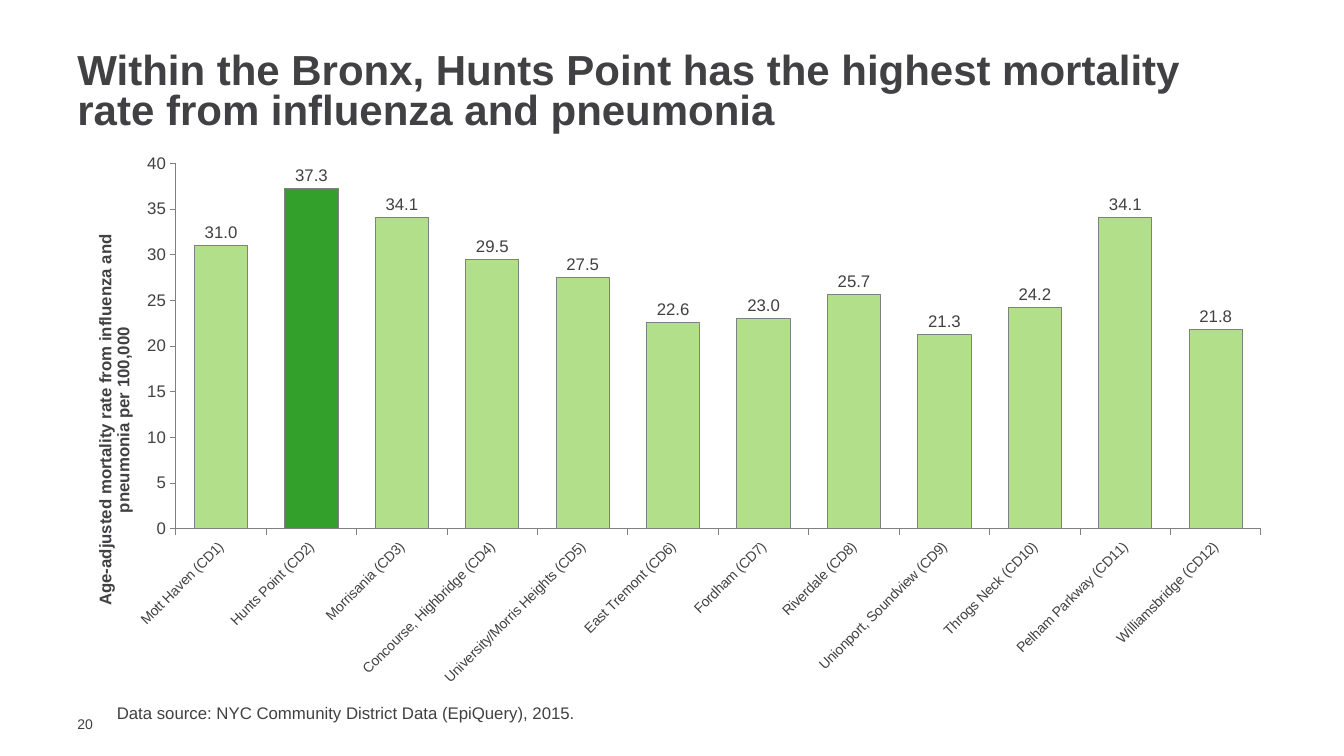
from dataclasses import dataclass

from lxml import etree
from pptx import Presentation
from pptx.chart.data import CategoryChartData
from pptx.dml.color import RGBColor
from pptx.enum.chart import XL_CHART_TYPE as ChartType
from pptx.enum.chart import XL_LABEL_POSITION as LabelPosition
from pptx.enum.chart import XL_TICK_MARK as TickMark
from pptx.enum.text import MSO_ANCHOR as Anchor
from pptx.oxml import parse_xml
from pptx.oxml.ns import nsdecls, qn
from pptx.util import Inches, Pt


@dataclass(frozen=True)
class Theme:
    font: str = "Arial"
    text: str = "414042"
    bar: str = "B2DF8A"
    highlight: str = "33A02C"
    outline: str = "808080"
    title_size: int = 30
    body_size: int = 12
    small_size: int = 10
    line_width: float = 0.75


THEME = Theme()
HIGHLIGHTED = "Hunts Point (CD2)"
MORTALITY_RATES = {
    "Mott Haven (CD1)": 31.0,
    HIGHLIGHTED: 37.3,
    "Morrisania (CD3)": 34.1,
    "Concourse, Highbridge (CD4)": 29.5,
    "University/Morris Heights (CD5)": 27.5,
    "East Tremont (CD6)": 22.6,
    "Fordham (CD7)": 23.0,
    "Riverdale (CD8)": 25.7,
    "Unionport, Soundview (CD9)": 21.3,
    "Throgs Neck (CD10)": 24.2,
    "Pelham Parkway (CD11)": 34.1,
    "Williamsbridge (CD12)": 21.8,
}
PLOT_LAYOUT = {"x": 0.071, "y": 0.03, "w": 0.916, "h": 0.665}


def style_font(font, size, bold=False):
    for name, value in {"name": THEME.font, "size": Pt(size), "bold": bold}.items():
        setattr(font, name, value)
    font.color.rgb = RGBColor.from_string(THEME.text)


def style_line(line):
    line.color.rgb = RGBColor.from_string(THEME.outline)
    line.width = Pt(THEME.line_width)


def fill_solid(fill, color):
    fill.solid()
    fill.fore_color.rgb = RGBColor.from_string(color)


def add_text(slide, text, box, size, bold=False, spacing=None, **frame_format):
    frame = slide.shapes.add_textbox(*map(Inches, box)).text_frame
    frame.word_wrap = True
    for name, value in frame_format.items():
        setattr(frame, name, value)
    paragraph = frame.paragraphs[0]
    paragraph.line_spacing = spacing
    run = paragraph.add_run()
    run.text = text
    style_font(run.font, size, bold)


def style_axis(axis, size):
    formats = {
        "has_major_gridlines": False,
        "major_tick_mark": TickMark.OUTSIDE,
        "minor_tick_mark": TickMark.NONE,
    }
    for name, value in formats.items():
        setattr(axis, name, value)
    style_font(axis.tick_labels.font, size)
    style_line(axis.format.line)


def set_axis_title(axis, text):
    frame = axis.axis_title.text_frame
    run = frame.paragraphs[0].add_run()
    run.text = text
    style_font(run.font, THEME.body_size, bold=True)


def set_plot_layout(chart):
    plot_area = chart.element.find(".//" + qn("c:plotArea"))
    for layout in plot_area.findall(qn("c:layout")):
        plot_area.remove(layout)
    layout = parse_xml(f"<c:layout {nsdecls('c')}><c:manualLayout/></c:layout>")
    settings = {"layoutTarget": "inner", "xMode": "edge", "yMode": "edge", **PLOT_LAYOUT}
    for name, value in settings.items():
        etree.SubElement(layout[0], qn(f"c:{name}")).set("val", str(value))
    plot_area.insert(0, layout)


def style_bars(plot):
    plot.gap_width = 70
    plot.vary_by_categories = False
    series = plot.series[0]
    highlighted_bar = series.points[list(MORTALITY_RATES).index(HIGHLIGHTED)]
    for bar, color in ((series, THEME.bar), (highlighted_bar, THEME.highlight)):
        fill_solid(bar.format.fill, color)
        style_line(bar.format.line)
    formats = {
        "show_value": True,
        "number_format": "#,##0.0",
        "number_format_is_linked": False,
        "position": LabelPosition.OUTSIDE_END,
    }
    for name, value in formats.items():
        setattr(series.data_labels, name, value)
    style_font(series.data_labels.font, THEME.body_size)


def add_rate_chart(slide, box):
    data = CategoryChartData()
    data.categories = list(MORTALITY_RATES)
    data.add_series("Series 1", list(MORTALITY_RATES.values()))
    frame = slide.shapes.add_chart(ChartType.COLUMN_CLUSTERED, *map(Inches, box), data)
    chart = frame.chart
    chart.has_title = False
    chart.has_legend = False
    style_font(chart.font, THEME.small_size)
    style_bars(chart.plots[0])
    style_axis(chart.category_axis, THEME.small_size)
    body = chart.category_axis.tick_labels.font._element.getparent().getparent().getparent()
    body.find(qn("a:bodyPr")).set("rot", "-2700000")
    rate_axis = chart.value_axis
    style_axis(rate_axis, THEME.body_size)
    for name, value in {"minimum_scale": 0, "maximum_scale": 40, "major_unit": 5}.items():
        setattr(rate_axis, name, value)
    rate_axis.tick_labels.number_format = "0"
    rate_axis.tick_labels.number_format_is_linked = False
    set_axis_title(
        rate_axis, "Age-adjusted mortality rate from influenza and pneumonia per 100,000"
    )
    set_plot_layout(chart)


def main():
    presentation = Presentation()
    presentation.slide_width = Inches(13.33)
    presentation.slide_height = Inches(7.5)
    slide = presentation.slides.add_slide(presentation.slide_layouts[6])
    add_text(
        slide, "20", (0.67, 7.1, 0.43, 0.17), THEME.small_size,
        vertical_anchor=Anchor.MIDDLE, margin_top=0, margin_right=0, margin_bottom=0,
    )
    add_text(
        slide, "Data source: NYC Community District Data (EpiQuery), 2015.",
        (1.06, 6.92, 9.92, 0.3), THEME.body_size,
    )
    add_text(
        slide,
        "Within the Bronx, Hunts Point has the highest mortality rate from influenza and pneumonia",
        (0.67, 0.47, 12, 0.91), THEME.title_size, bold=True, spacing=0.8,
        vertical_anchor=Anchor.MIDDLE,
    )
    add_rate_chart(slide, (0.91, 1.46, 11.75, 5.45))
    presentation.save("out.pptx")


if __name__ == "__main__":
    main()
